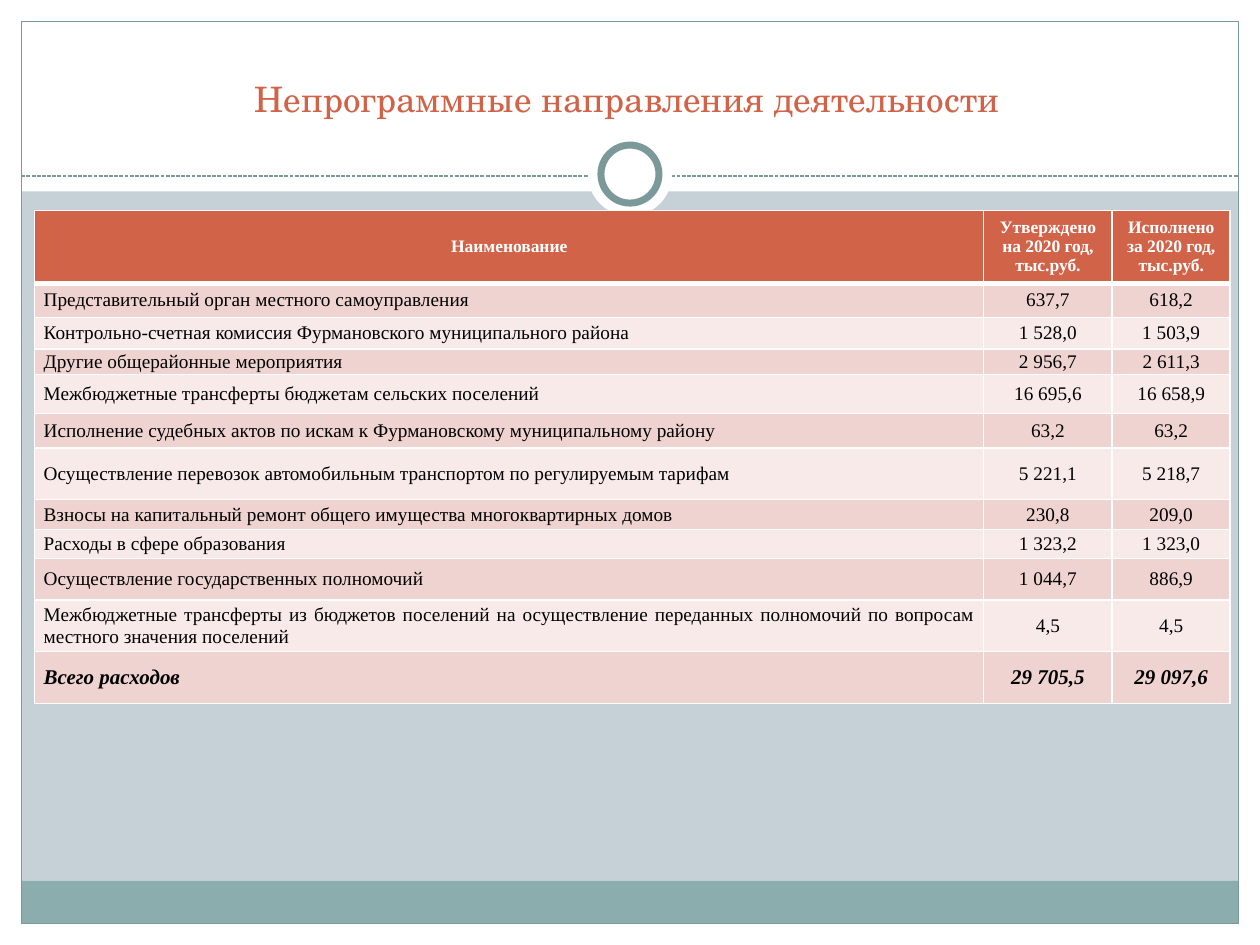
from dataclasses import dataclass

from lxml.etree import SubElement
from pptx import Presentation
from pptx.dml.color import RGBColor
from pptx.enum.dml import MSO_LINE
from pptx.enum.shapes import MSO_CONNECTOR, MSO_SHAPE
from pptx.enum.text import MSO_ANCHOR, PP_ALIGN
from pptx.oxml.ns import qn
from pptx.util import Cm, Pt

WHITE = "FFFFFF"
TEAL = "7C999A"
RUST = "D16349"
ROW_FILLS = ["F7EAE9", "EED3D0"]
COLUMN_WIDTHS = [19.13, 2.59, 2.38]
ROW_HEIGHTS = [1.47, 0.69, 0.64, 0.51, 0.79, 0.69, 1.04, 0.61, 0.58, 0.84, 1.04, 1.04]
ROWS = [
    ("Наименование", "Утверждено на 2020 год, тыс.руб.", "Исполнено за 2020 год, тыс.руб."),
    ("Представительный орган местного самоуправления", "637,7", "618,2"),
    ("Контрольно-счетная комиссия Фурмановского муниципального района", "1 528,0", "1 503,9"),
    ("Другие общерайонные мероприятия", "2 956,7", "2 611,3"),
    ("Межбюджетные трансферты бюджетам сельских поселений", "16 695,6", "16 658,9"),
    ("Исполнение судебных актов по искам к Фурмановскому муниципальному району", "63,2", "63,2"),
    ("Осуществление перевозок автомобильным транспортом по регулируемым тарифам", "5 221,1", "5 218,7"),
    ("Взносы на капитальный ремонт общего имущества многоквартирных домов", "230,8", "209,0"),
    ("Расходы в сфере образования", "1 323,2", "1 323,0"),
    ("Осуществление государственных полномочий", "1 044,7", "886,9"),
    ("Межбюджетные трансферты из бюджетов поселений на осуществление переданных полномочий "
     "по вопросам местного значения поселений", "4,5", "4,5"),
    ("Всего расходов", "29 705,5", "29 097,6"),
]


@dataclass
class Box:
    left: float
    top: float
    width: float
    height: float

    def lengths(self):
        return Cm(self.left), Cm(self.top), Cm(self.width), Cm(self.height)


def color(value):
    return RGBColor.from_string(value)


def add_figure(page, kind, box, fill=None, line=None, weight=0.75):
    figure = page.shapes.add_shape(kind, *box.lengths())
    figure.shadow.inherit = False
    if fill:
        figure.fill.solid()
        figure.fill.fore_color.rgb = color(fill)
    else:
        figure.fill.background()
    if line:
        figure.line.color.rgb = color(line)
        figure.line.width = Pt(weight)
    else:
        figure.line.fill.background()


def add_frame(page, box, margin=0.43, header=3.86, footer=0.86):
    right = box.left + box.width - margin
    bottom = box.top + box.height - margin
    inner = Box(box.left + margin, box.top + margin, box.width - 2 * margin, box.height - 2 * margin)
    for band in (
        Box(box.left, bottom, box.width, margin),
        Box(box.left, box.top, box.width, header),
        Box(box.left, box.top, margin, box.height),
        Box(right, box.top, margin, box.height),
    ):
        add_figure(page, MSO_SHAPE.RECTANGLE, band, WHITE)
    add_figure(page, MSO_SHAPE.RECTANGLE, Box(inner.left, bottom - footer, inner.width, footer), "8CADAE")
    add_figure(page, MSO_SHAPE.RECTANGLE, inner, line=TEAL)


def add_divider(page, box):
    middle = box.top + box.height / 2
    rule = page.shapes.add_connector(
        MSO_CONNECTOR.STRAIGHT, Cm(box.left), Cm(middle), Cm(box.left + box.width), Cm(middle))
    rule.line.color.rgb = color(TEAL)
    rule.line.width = Pt(0.75)
    rule.line.dash_style = MSO_LINE.SQUARE_DOT
    SubElement(rule._element.spPr, qn("a:effectLst"))
    center = box.left + box.width / 2
    for size, line in ((1.7, None), (1.17, TEAL)):
        circle = Box(center - size / 2, middle - 0.04 - size / 2, size, size)
        add_figure(page, MSO_SHAPE.OVAL, circle, WHITE, line, 4)


def add_title(page, box, text):
    frame = page.shapes.add_textbox(*box.lengths()).text_frame
    frame.word_wrap = True
    frame.vertical_anchor = MSO_ANCHOR.BOTTOM
    para = frame.paragraphs[0]
    para.text = text
    para.alignment = PP_ALIGN.CENTER
    para.font.name = "TeX Gyre Schola"
    para.font.size = Pt(20)
    para.font.color.rgb = color(RUST)


def set_borders(cell, weights):
    properties = cell._tc.get_or_add_tcPr()
    for side, weight in weights.items():
        border = SubElement(properties, qn(f"a:ln{side}"), w=str(Pt(weight)))
        fill = SubElement(border, qn("a:solidFill"))
        SubElement(fill, qn("a:srgbClr"), val=WHITE)


def fill_cell(cell, text, row, column):
    is_header = row == 0
    is_total = row == len(ROWS) - 1
    set_borders(cell, {"L": 1, "R": 1, "T": 3 if row == 1 else 1, "B": 3 if is_header else 1})
    cell.fill.solid()
    cell.fill.fore_color.rgb = color(RUST if is_header else ROW_FILLS[row % 2])
    cell.vertical_anchor = MSO_ANCHOR.MIDDLE
    cell.margin_left = cell.margin_right = Cm(0.18)
    cell.margin_top = cell.margin_bottom = 0
    para = cell.text_frame.paragraphs[0]
    para.text = text
    para.alignment = PP_ALIGN.CENTER if is_header or column else PP_ALIGN.JUSTIFY
    para.font.name = "Times New Roman"
    para.font.size = Pt(10 if is_header else 12 if is_total else 11)
    para.font.bold = is_header or is_total
    para.font.italic = is_total
    para.font.color.rgb = color(WHITE if is_header else "000000")


def add_spending_table(page, box):
    table = page.shapes.add_table(len(ROWS), len(COLUMN_WIDTHS), *box.lengths()).table
    for column, width in zip(table.columns, COLUMN_WIDTHS):
        column.width = Cm(width)
    for row, height in zip(table.rows, ROW_HEIGHTS):
        row.height = Cm(height)
    for row, values in enumerate(ROWS):
        for column, text in enumerate(values):
            fill_cell(table.cell(row, column), text, row, column)


def main():
    deck = Presentation()
    deck.slide_width = Cm(25.4)
    deck.slide_height = Cm(19.05)
    page = deck.slides.add_slide(deck.slide_layouts[6])
    page.background.fill.solid()
    page.background.fill.fore_color.rgb = color("C5D1D7")
    add_frame(page, Box(0, 0, 25.4, 19.05))
    add_divider(page, Box(0.43, 2.7, 24.54, 1.7))
    add_spending_table(page, Box(0.7, 4.24, sum(COLUMN_WIDTHS), sum(ROW_HEIGHTS)))
    add_title(page, Box(0.79, 1.19, 23.7, 1.35), "Непрограммные направления деятельности")
    deck.save("out.pptx")


if __name__ == "__main__":
    main()
